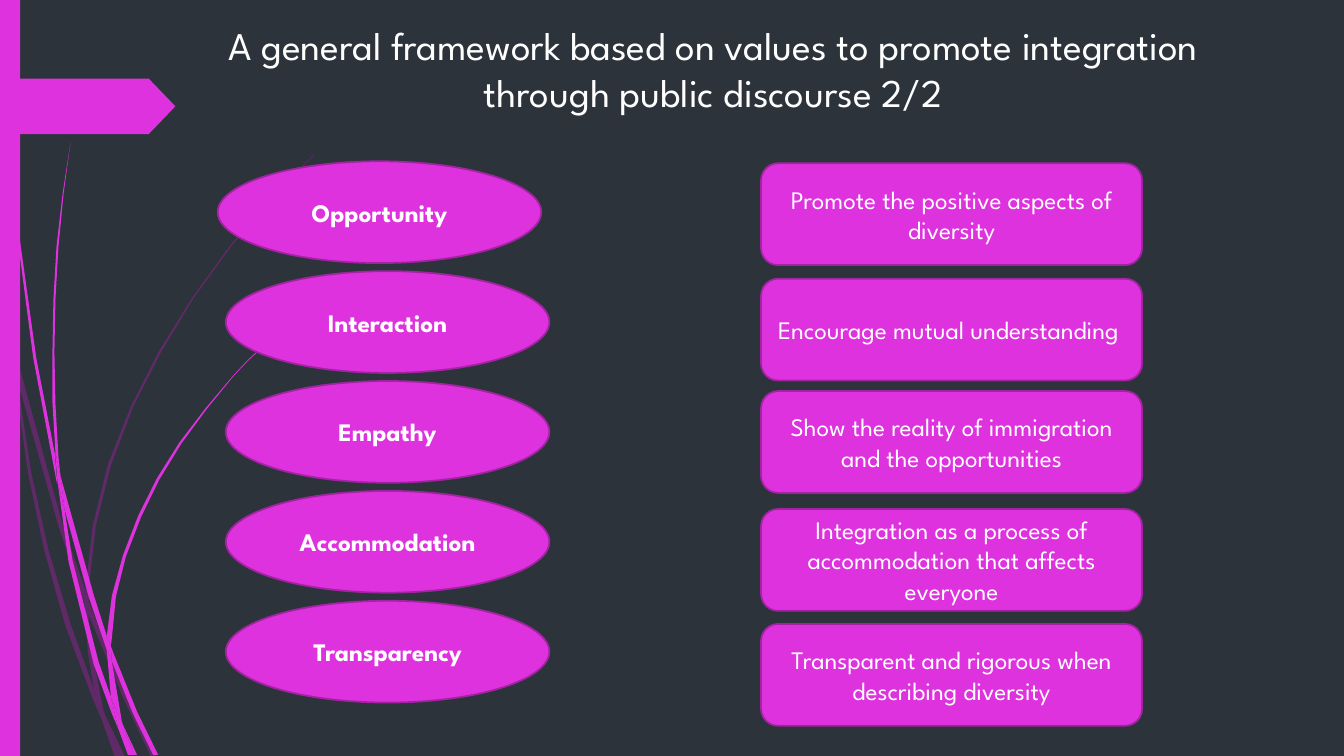
from dataclasses import dataclass
from lxml import etree
from pptx import Presentation
from pptx import util as u
from pptx.dml.color import RGBColor
from pptx.enum import shapes, text
from pptx.oxml.ns import qn

CELL = u.Inches(0.1)  # the grid has square cells
FINE = CELL / 10  # wisp outlines use a ten times finer grid
COLS, ROWS = 133.33, 75


@dataclass
class Theme:
    back: str = "2C333A"
    main: str = "DE32DE"
    edge: str = "A224A2"
    faint: str = "AF1CAF"
    ink: str = "FFFFFF"
    head: str = "FEFEFE"
    font: str = "League Spartan"
    big: int = 28
    small: int = 18
    rule: float = 1.25


T = Theme()
KIND = shapes.MSO_SHAPE

HEAD = "A general framework based on values to promote integration through public discourse 2/2"

# Each value: name, left and top of its oval, top of its card, card wording
VALUES = [
    ("Opportunity", 21.6, 16, 16.2, "Promote the positive aspects of diversity"),
    ("Interaction", 22.4, 26.9, 27.65, "Encourage mutual understanding "),
    ("Empathy", 22.4, 37.8, 38.8, "Show the reality of immigration and the opportunities"),
    ("Accommodation", 22.4, 48.7, 50.5,
     "Integration as a process of accommodation that affects everyone"),
    ("Transparency", 22.4, 59.6, 61.9, "Transparent and rigorous when describing diversity"),
]

# Outlines of the wisp pieces, on the fine grid
FAINT = [
    [(11, 350), (9, 322), (0, 282), (0, 299), (10, 344)],
    [(58, 522), (84, 599), (85, 586), (62, 520), (14, 345), (17, 376)],
    [(92, 607), (88, 596), (88, 610), (123, 694), (150, 751), (155, 751), (127, 692)],
    [(119, 751), (124, 751), (105, 711)],
    [(93, 683), (70, 619), (48, 545), (31, 469), (17, 376), (11, 350), (28, 470),
     (44, 546), (65, 621), (92, 693), (101, 714), (99, 707)],
    [(84, 599), (87, 646), (93, 683), (96, 692), (105, 711), (103, 706), (91, 646),
     (88, 610), (88, 608)],
    [(88, 584), (95, 522), (110, 462), (132, 404), (160, 349), (192, 296), (229, 245),
     (268, 198), (290, 175), (312, 154), (312, 153), (289, 175), (268, 197), (228, 244),
     (191, 295), (158, 348), (130, 403), (107, 461), (92, 522), (85, 584), (85, 586),
     (88, 596)],
    [(101, 714), (114, 751), (119, 751)],
    [(88, 608), (88, 610), (88, 596), (85, 586), (84, 599)],
    [(96, 692), (93, 683), (99, 707), (101, 714), (119, 751), (105, 711)],
]
BRIGHT = [
    [(7, 110), (17, 233), (33, 355), (56, 477), (57, 481), (55, 457), (55, 453),
     (36, 355), (19, 232), (8, 109), (5, 48), (4, 0), (3, 0), (4, 48)],
    [(88, 592), (106, 645), (106, 633), (106, 631), (93, 590), (60, 472), (64, 505)],
    [(113, 649), (110, 641), (111, 656), (132, 708), (152, 749), (157, 749), (136, 706)],
    [(110, 691), (98, 657), (72, 556), (64, 505), (57, 477), (68, 557), (93, 659),
     (111, 708), (117, 722), (116, 717)],
    [(60, 472), (58, 453), (55, 401), (54, 349), (55, 297), (58, 245), (63, 193),
     (70, 141), (62, 193), (56, 245), (53, 297), (52, 349), (52, 399), (55, 449)],
    [(133, 749), (136, 749), (122, 719)],
    [(57, 477), (64, 505), (60, 472), (55, 449), (55, 453)],
    [(111, 633), (115, 592), (125, 552), (140, 513), (158, 476), (180, 440), (205, 406),
     (231, 374), (245, 359), (261, 344), (260, 344), (245, 358), (231, 373), (204, 405),
     (178, 439), (156, 474), (137, 512), (122, 551), (111, 591), (106, 631), (110, 641)],
    [(117, 722), (127, 749), (131, 749)],
    [(106, 645), (110, 691), (116, 706), (122, 719), (121, 716), (111, 656), (109, 651)],
    [(106, 645), (109, 651), (111, 656), (110, 641), (106, 631), (106, 633)],
    [(116, 706), (110, 691), (116, 717), (117, 722), (130, 749), (133, 749), (122, 719)],
]


def cells(*nums):
    return [round(n * CELL) for n in nums]


def paint(shape, fill, edge=None):
    shape.shadow.inherit = False
    shape.fill.solid()
    shape.fill.fore_color.rgb = RGBColor.from_string(fill)
    if edge:
        shape.line.color.rgb = RGBColor.from_string(edge)
        shape.line.width = u.Pt(T.rule)
    else:
        shape.line.fill.background()


def write(frame, words, size, ink, bold=False):
    frame.word_wrap = True
    frame.auto_size = text.MSO_AUTO_SIZE.NONE
    para = frame.paragraphs[0]
    para.alignment = text.PP_ALIGN.CENTER
    run = para.add_run()
    run.text = words
    font = run.font
    font.name, font.size, font.bold = T.font, u.Pt(size), bold
    font.color.rgb = RGBColor.from_string(ink)


def wisp(slide, edge, color, alpha=None):
    form = slide.shapes.build_freeform(*edge[0], scale=FINE)
    form.add_line_segments(edge[1:])
    shape = form.convert_to_shape()
    paint(shape, color)
    if alpha:
        tint = shape.fill._xPr.find(".//" + qn("a:srgbClr"))
        etree.SubElement(tint, qn("a:alpha")).set("val", str(alpha * 1000))


def decor(slide):
    # Curved wisps
    for edge in FAINT:
        wisp(slide, edge, T.faint, 40)
    for edge in BRIGHT:
        wisp(slide, edge, T.main)
    # Side band and arrow tab
    band = slide.shapes.add_shape(KIND.RECTANGLE, *cells(0, 0, 2, ROWS))
    tab = slide.shapes.add_shape(KIND.PENTAGON, *cells(0, 7.8, 17.4, 5.5))
    tab.adjustments[0] = 0.48
    for shape in (band, tab):
        paint(shape, T.main)


def title(slide, box):
    head = slide.shapes.title
    head.left, head.top, head.width, head.height = cells(*box)
    head.text_frame.vertical_anchor = text.MSO_ANCHOR.TOP
    write(head.text_frame, HEAD, T.big, T.head)


def label(slide, kind, box, words, bold=False):
    shape = slide.shapes.add_shape(kind, *cells(*box))
    paint(shape, T.main, T.edge)
    shape.text_frame.vertical_anchor = text.MSO_ANCHOR.MIDDLE
    write(shape.text_frame, words, T.small, T.ink, bold)


def pairs(slide, oval, card, high):
    """Ovals and cards; oval is a width, card is a left and a width."""
    for name, left, top, low, words in VALUES:
        label(slide, KIND.OVAL, (left, top, oval, high), name, True)
        label(slide, KIND.ROUNDED_RECTANGLE, (card[0], low, card[1], high), words)


def main():
    deck = Presentation()
    deck.slide_width, deck.slide_height = cells(COLS, ROWS)
    slide = deck.slides.add_slide(deck.slide_layouts[5])
    back = slide.background.fill
    back.solid()
    back.fore_color.rgb = RGBColor.from_string(T.back)
    decor(slide)
    title(slide, (17, 1.6, 107.5, 11.4))
    pairs(slide, 32.1, (75.5, 37.8), 10.1)
    deck.save("out.pptx")


if __name__ == "__main__":
    main()
